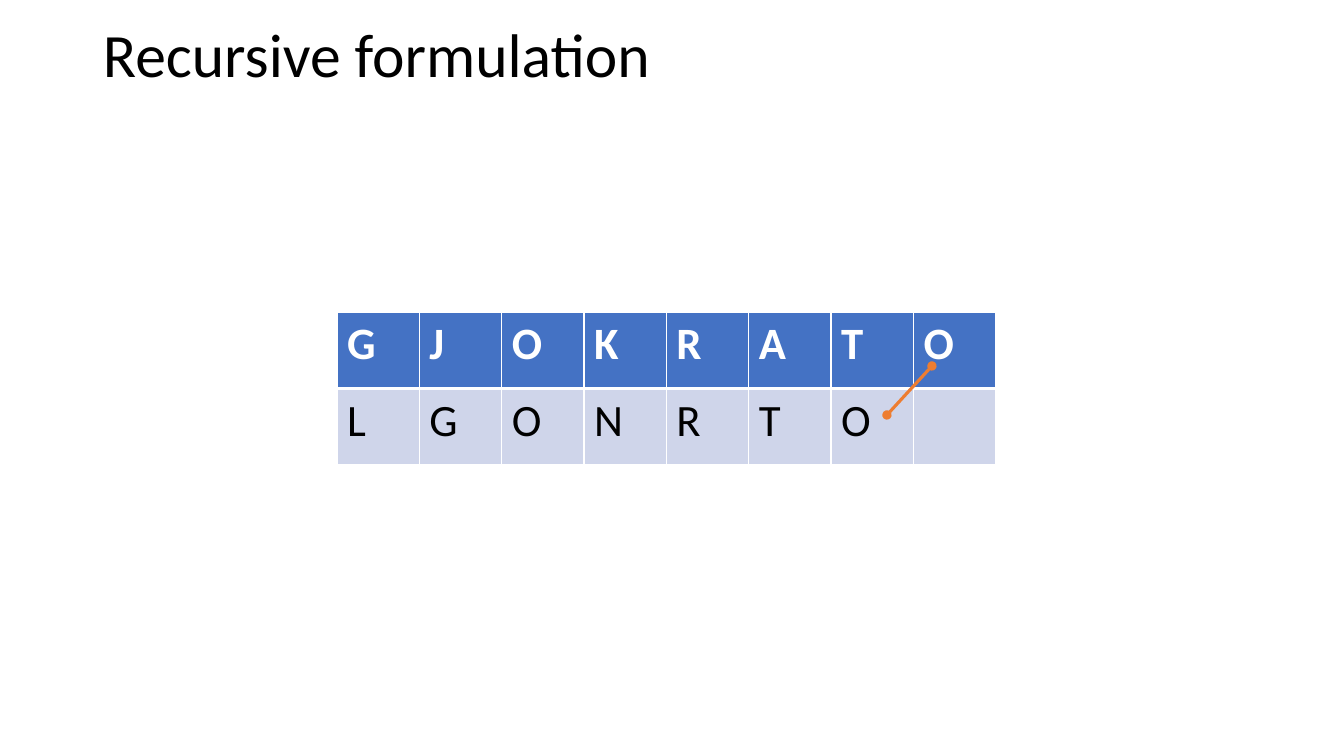
from dataclasses import dataclass

from lxml.etree import SubElement
from pptx import Presentation
from pptx.dml.color import RGBColor
from pptx.enum.shapes import MSO_CONNECTOR
from pptx.enum.text import MSO_ANCHOR
from pptx.oxml.ns import qn
from pptx.util import Emu, Pt


@dataclass(frozen=True)
class Theme:
    font: str = "Calibri"
    text: str = "000000"
    light: str = "FFFFFF"
    header: str = "4472C4"
    body: str = "CFD5EA"
    accent: str = "ED7D31"
    title_size: int = 44
    cell_size: int = 32
    thin: float = 1
    thick: float = 3
    link: float = 2.25


def px(n):
    return Emu(round(n * 914400 / 100.8))


class Deck:
    def __init__(self, theme):
        self.theme = theme
        self.prs = Presentation()
        self.prs.slide_width, self.prs.slide_height = px(1344), px(756)
        self.s = self.prs.slides.add_slide(self.prs.slide_layouts[6])

    def run(self, p, text, size, color, bold=False):
        r = p.add_run()
        r.text = text
        r.font.name = self.theme.font
        r.font.size = Pt(size)
        r.font.bold = bold
        r.font.color.rgb = RGBColor.from_string(color)

    def title(self, text, x, y, w, h):
        tf = self.s.shapes.add_textbox(px(x), px(y), px(w), px(h)).text_frame
        tf.word_wrap = True
        tf.vertical_anchor = MSO_ANCHOR.MIDDLE
        p = tf.paragraphs[0]
        p.line_spacing = 0.9
        self.run(p, text, self.theme.title_size, self.theme.text)

    def border(self, cell, side, width):
        ln = SubElement(cell._tc.get_or_add_tcPr(), qn(f"a:ln{side}"), w=str(Pt(width)))
        fill = SubElement(ln, qn("a:solidFill"))
        SubElement(fill, qn("a:srgbClr"), val=self.theme.light)

    def table(self, words, x, y, w, h):
        t = self.theme
        n_rows, n_cols = len(words), max(map(len, words))
        tbl = self.s.shapes.add_table(n_rows, n_cols, px(x), px(y), px(w), px(h)).table
        tbl.horz_banding = False
        for col in tbl.columns:
            col.width = px(w / n_cols)
        for i, (row, word) in enumerate(zip(tbl.rows, words)):
            row.height = px(h / n_rows)
            head = i == 0
            # The rule under the header is shared by both rows
            widths = {"L": t.thin, "R": t.thin,
                      "T": t.thick if i == 1 else t.thin,
                      "B": t.thick if head else t.thin}
            for j, cell in enumerate(row.cells):
                for side, width in widths.items():
                    self.border(cell, side, width)
                cell.fill.solid()
                cell.fill.fore_color.rgb = RGBColor.from_string(t.header if head else t.body)
                if j < len(word):
                    self.run(cell.text_frame.paragraphs[0], word[j], t.cell_size,
                             t.light if head else t.text, head)

    def link(self, x1, y1, x2, y2):
        c = self.s.shapes.add_connector(MSO_CONNECTOR.STRAIGHT, px(x1), px(y1), px(x2), px(y2))
        c.line.color.rgb = RGBColor.from_string(self.theme.accent)
        c.line.width = Pt(self.theme.link)
        ln = c.line._get_or_add_ln()
        for end in ("headEnd", "tailEnd"):
            SubElement(ln, qn(f"a:{end}"), type="oval")
        SubElement(c._element.spPr, qn("a:effectLst"))


def main():
    deck = Deck(Theme())

    # Title
    deck.title("Recursive formulation", 93, 18, 1159, 80)

    # The two words, one letter per cell
    deck.table(["GJOKRATO", "LGONRTO"], 337, 312, 659, 153)

    # Match between the last letters
    deck.link(932, 366, 887, 415)

    deck.prs.save("out.pptx")


if __name__ == "__main__":
    main()
